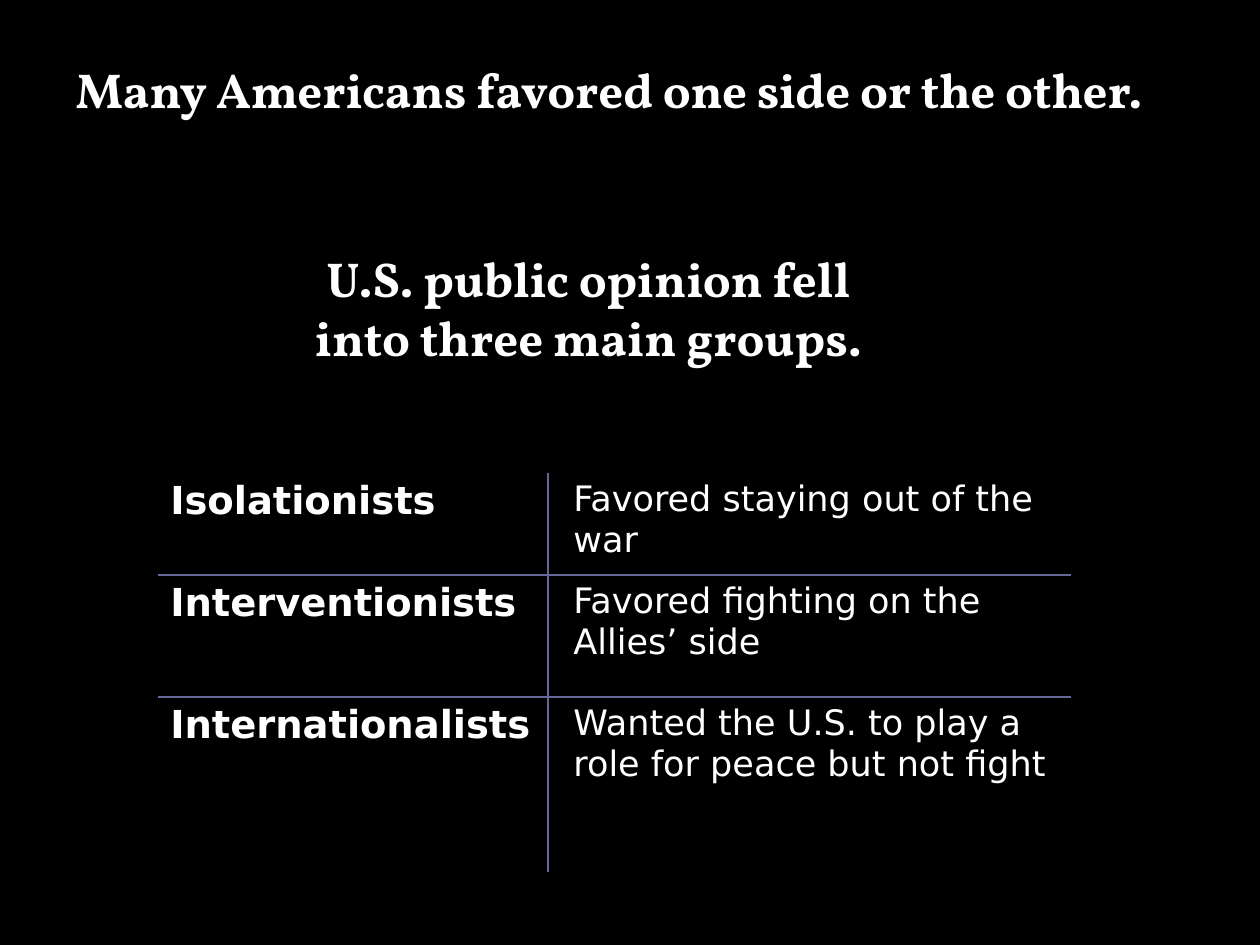
from dataclasses import dataclass

from lxml import etree
from pptx import Presentation
from pptx.dml.color import RGBColor
from pptx.enum.text import MSO_ANCHOR, MSO_AUTO_SIZE, PP_ALIGN
from pptx.oxml.ns import qn
from pptx.util import Cm, Pt

TOP = MSO_ANCHOR.TOP
NO_FIT = MSO_AUTO_SIZE.NONE
LEFT, CENTER = PP_ALIGN.LEFT, PP_ALIGN.CENTER
TITLE_ONLY = 5


@dataclass(frozen=True)
class Theme:
    background: str = "000000"
    text: str = "FFFFFF"
    rule: str = "666699"
    heading_font: str = "Vollkorn"
    table_font: str = "DejaVu Sans"
    heading_size: int = 28
    group_size: int = 22
    view_size: int = 20
    rule_width: int = 1


@dataclass(frozen=True)
class OpinionGroup:
    name: str
    view: str
    height: float


THEME = Theme()
GROUPS = [
    OpinionGroup("Isolationists", "Favored staying out of the war", 2.06),
    OpinionGroup("Interventionists", "Favored fighting on the Allies’ side", 2.46),
    OpinionGroup("Internationalists",
                 "Wanted the U.S. to play a role for peace but not fight", 3.53),
]
COLUMN_WIDTHS = (7.87, 10.54)
VIEW_INDENT = 0.51


def style_paragraph(p, font: str, size: int, bold: bool, align=LEFT) -> None:
    p.alignment = align
    p.font.name = font
    p.font.size = Pt(size)
    p.font.bold = bold
    p.font.color.rgb = RGBColor.from_string(THEME.text)


def write_heading(s, text: str, left: float, top: float, width: float,
                  height: float, align) -> None:
    s.left, s.top, s.width, s.height = Cm(left), Cm(top), Cm(width), Cm(height)
    tf = s.text_frame
    tf.text = text
    tf.word_wrap = True
    tf.auto_size = NO_FIT
    tf.vertical_anchor = TOP
    style_paragraph(tf.paragraphs[0], THEME.heading_font, THEME.heading_size,
                    True, align)


def set_borders(cell, ruled_sides: set[str]) -> None:
    """Rule the given sides (L, R, T, B) and clear the others."""
    tc_pr = cell._tc.get_or_add_tcPr()
    for side in "LRTB":
        line = etree.SubElement(tc_pr, qn(f"a:ln{side}"),
                                w=str(Pt(THEME.rule_width)))
        if side in ruled_sides:
            fill = etree.SubElement(line, qn("a:solidFill"))
            etree.SubElement(fill, qn("a:srgbClr"), val=THEME.rule)
        else:
            etree.SubElement(line, qn("a:noFill"))


def write_cell(cell, text: str, size: int, bold: bool, ruled_sides: set[str]) -> None:
    set_borders(cell, ruled_sides)
    cell.fill.background()
    cell.text = text
    style_paragraph(cell.text_frame.paragraphs[0], THEME.table_font, size, bold)


def add_group_table(slide, left: float, top: float) -> None:
    frame = slide.shapes.add_table(
        len(GROUPS), len(COLUMN_WIDTHS), Cm(left), Cm(top),
        Cm(sum(COLUMN_WIDTHS)), Cm(sum(g.height for g in GROUPS)))
    table = frame.table
    table.first_row = table.horz_banding = False
    for column, width in zip(table.columns, COLUMN_WIDTHS):
        column.width = Cm(width)
    for i, group in enumerate(GROUPS):
        table.rows[i].height = Cm(group.height)
        rules = set()
        if i > 0:
            rules.add("T")
        if i < len(GROUPS) - 1:
            rules.add("B")
        name_cell, view_cell = table.cell(i, 0), table.cell(i, 1)
        write_cell(name_cell, group.name, THEME.group_size, True, rules | {"R"})
        write_cell(view_cell, group.view, THEME.view_size, False, rules | {"L"})
        view_cell.margin_left = Cm(VIEW_INDENT)


def main() -> None:
    prs = Presentation()
    prs.slide_width, prs.slide_height = Cm(25.4), Cm(19.05)
    slide = prs.slides.add_slide(prs.slide_layouts[TITLE_ONLY])
    fill = slide.background.fill
    fill.solid()
    fill.fore_color.rgb = RGBColor.from_string(THEME.background)

    write_heading(slide.shapes.title, "Many Americans favored one side or the other.",
                  1.27, 1.07, 23.5, 2.24, LEFT)
    add_group_table(slide, 3.18, 9.53)
    subtitle = slide.shapes.add_textbox(0, 0, 0, 0)
    write_heading(subtitle, "U.S. public opinion fell into three main groups.",
                  5.51, 4.88, 12.7, 2.64, CENTER)
    prs.save("out.pptx")


if __name__ == "__main__":
    main()
